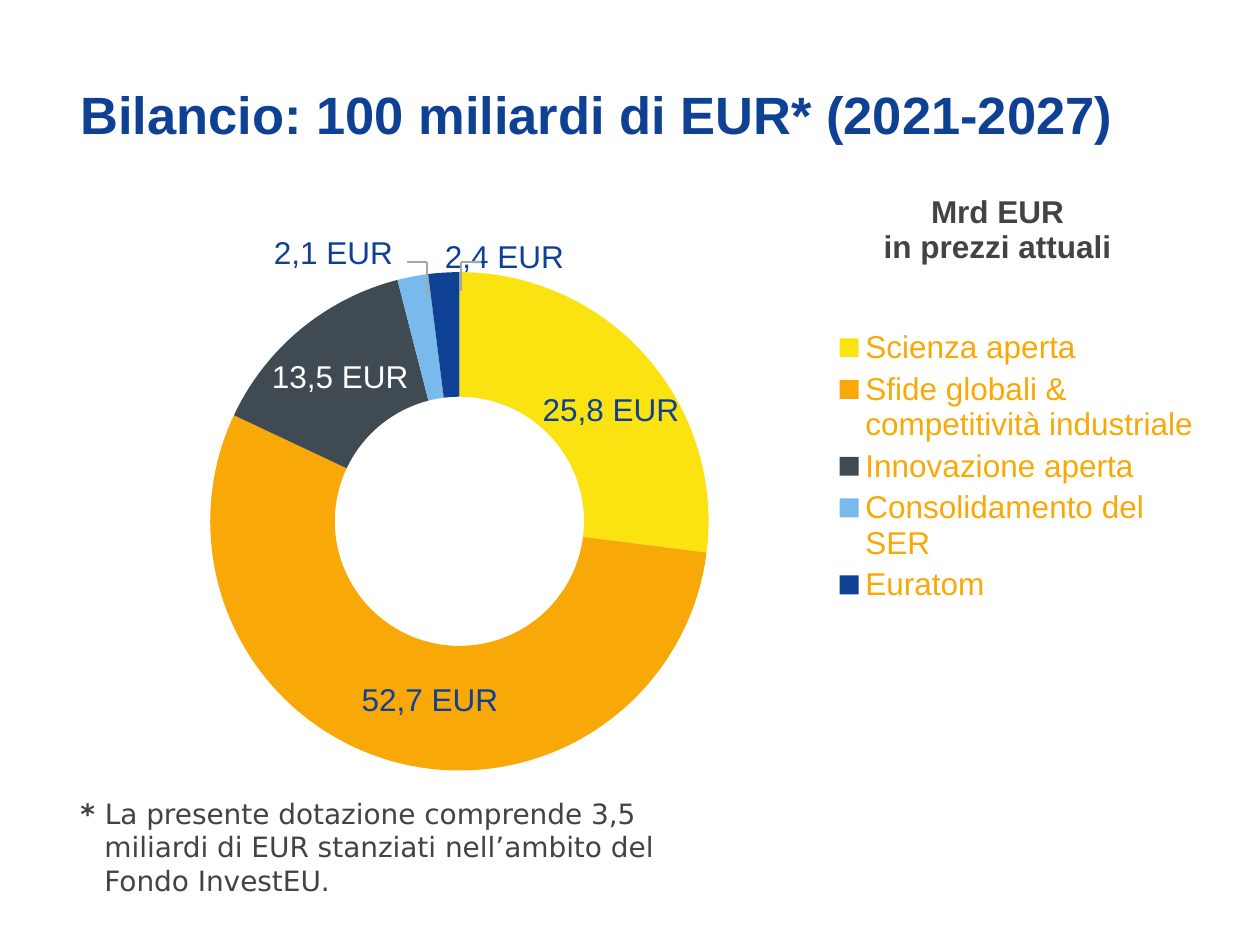
import dataclasses
from typing import Any

import pptx
import pptx.chart.data
import pptx.dml.color
import pptx.enum.chart
import pptx.enum.shapes
import pptx.oxml
import pptx.oxml.ns
import pptx.util

WIDTH, HEIGHT = pptx.util.Inches(10), pptx.util.Inches(7.5)
COLORS = {
    "blue": "0E4194", "yellow": "FBE312", "orange": "F8A907", "slate": "404A52",
    "sky": "78BAEB", "text": "444342", "white": "FFFFFF", "leader": "A6A6A6",
}


@dataclasses.dataclass(frozen=True)
class Budget:
    name: str
    amount: float
    color: str
    label_color: str = "blue"
    shift: tuple[float, float] = (0, 0)  # label offset, shares of the chart


@dataclasses.dataclass(frozen=True)
class Leader:
    """Elbow between a label and a thin slice, in shares of the slide."""
    corner_x: float
    end_x: float
    end_y: float


@dataclasses.dataclass(frozen=True)
class Note:
    box: tuple[float, float, float, float]  # shares of the slide
    runs: tuple[tuple[str, bool], ...]
    font: dict[str, Any]
    margin: float  # inches from the left edge of the text area
    hang: float


BUDGETS = [
    Budget("Scienza aperta", 25.8, "yellow", shift=(0.01, 0.02)),
    Budget("Sfide globali & competitività industriale", 52.7, "orange", shift=(0.02, 0)),
    Budget("Innovazione aperta", 13.5, "slate", "white"),
    Budget("Consolidamento del SER", 2.1, "sky", shift=(-0.08, -0.13)),
    Budget("Euratom", 2.4, "blue", shift=(0.05, -0.12)),
]
LEADER_Y = 2.08 / 7.5
LEADERS = [Leader(0.366, 0.382, 2.31 / 7.5), Leader(0.339, 0.323, 2.35 / 7.5)]
NOTES = [
    Note((0.054, 0.08, 0.844, 0.105), (("Bilancio: 100 miliardi di EUR* (2021-2027)", True),),
         {"name": "Arial", "size": 30, "color": "blue"}, 0.39, -0.39),
    Note((0.034, 0.836, 0.521, 0.157),
         (("* ", True), ("La presente dotazione comprende 3,5 miliardi di EUR stanziati "
                         "nell’ambito del Fondo InvestEU.", False)),
         {"name": "DejaVu Sans", "size": 16, "color": "text"}, 0.39, -0.19),
]


def rgb(name: str) -> pptx.dml.color.RGBColor:
    return pptx.dml.color.RGBColor.from_string(COLORS[name])


def place(x: float, y: float) -> tuple[int, int]:
    return round(x * WIDTH), round(y * HEIGHT)


def set_font(font, values: dict[str, Any]) -> None:
    for key, value in values.items():
        if key == "color":
            font.color.rgb = rgb(value)
        else:
            setattr(font, key, pptx.util.Pt(value) if key == "size" else value)


def set_layout(parent, index: int, values: dict[str, Any]) -> None:
    """Give a chart part a manual layout, in shares of the chart."""
    for old in parent.findall(pptx.oxml.ns.qn("c:layout")):
        parent.remove(old)
    items = "".join(f'<c:{key} val="{value}"/>' for key, value in values.items())
    parent.insert(index, pptx.oxml.parse_xml(
        f'<c:layout {pptx.oxml.ns.nsdecls("c")}>'
        f"<c:manualLayout>{items}</c:manualLayout></c:layout>"))


def add_note(s, note: Note) -> None:
    x, y, w, h = note.box
    tf = s.shapes.add_textbox(*place(x, y), *place(w, h)).text_frame
    tf.word_wrap = True
    p = tf.paragraphs[0]
    pPr = p._p.get_or_add_pPr()
    pPr.set("marL", str(pptx.util.Inches(note.margin)))
    pPr.set("indent", str(pptx.util.Inches(note.hang)))
    for text, bold in note.runs:
        r = p.add_run()
        r.text = text
        set_font(r.font, {**note.font, "bold": bold})


def add_line(s, start: tuple[float, float], end: tuple[float, float]) -> None:
    sp = s.shapes.add_connector(pptx.enum.shapes.MSO_CONNECTOR.STRAIGHT,
                                *place(*start), *place(*end))
    sp.line.color.rgb = rgb("leader")
    sp.line.width = pptx.util.Pt(1.5)
    sp._element.spPr.append(
        pptx.oxml.parse_xml(f'<a:effectLst {pptx.oxml.ns.nsdecls("a")}/>'))


def add_budget_chart(s) -> None:
    # Each slice is a share of the total, in whole percent
    total = sum(b.amount for b in BUDGETS)
    data = pptx.chart.data.CategoryChartData()
    data.categories = [b.name for b in BUDGETS]
    data.add_series("Series 1", [round(100 * b.amount / total) for b in BUDGETS])
    chart = s.shapes.add_chart(pptx.enum.chart.XL_CHART_TYPE.DOUGHNUT,
                               *place(0.067, 0.151), *place(0.902, 0.685), data).chart
    base = {"name": "Arial", "size": 18}
    set_font(chart.font, {**base, "color": "orange"})

    # Title and legend to the right of the ring
    chart.has_title = True
    tf = chart.chart_title.text_frame
    tf.text = "Mrd EUR\nin prezzi attuali"
    for p in tf.paragraphs:
        set_font(p.runs[0].font, {**base, "bold": True, "color": "text"})
    chart.has_legend = True
    chart.legend.position = pptx.enum.chart.XL_LEGEND_POSITION.RIGHT
    chart.legend.include_in_layout = False
    set_font(chart.legend.font, {**base, "color": "orange"})

    # Slices and their labels
    plot = chart.plots[0]
    plot.vary_by_categories = True
    series = plot.series[0]
    labels = series.data_labels
    labels.show_percentage, labels.show_value = True, False
    set_font(labels.font, {**base, "color": "white"})
    for i, b in enumerate(BUDGETS):
        point = series.points[i]
        point.format.fill.solid()
        point.format.fill.fore_color.rgb = rgb(b.color)
        point.format.line.fill.background()
        tf = point.data_label.text_frame
        tf.text = f"{b.amount} EUR".replace(".", ",")
        set_font(tf.paragraphs[0].runs[0].font, {**base, "color": b.label_color})

    # Manual positions
    root = chart.element
    for b, label in zip(BUDGETS, root.xpath(".//c:dLbl")):
        if any(b.shift):
            set_layout(label, 1, dict(zip("xy", b.shift)))
    for flag in root.xpath(".//c:showLeaderLines"):
        flag.set("val", "0")
    edges = {"xMode": "edge", "yMode": "edge"}
    set_layout(root.xpath(".//c:plotArea")[0], 0,
               {"layoutTarget": "inner", **edges, "x": 0.11, "y": 0.2, "w": 0.44, "h": 0.77})
    set_layout(root.xpath(".//c:legend")[0], 1,
               {**edges, "x": 0.66, "y": 0.28, "w": 0.32, "h": 0.44})
    set_layout(root.xpath(".//c:chart/c:title")[0], 1, {**edges, "x": 0.7, "y": 0.07})


def main() -> None:
    prs = pptx.Presentation()
    prs.slide_width, prs.slide_height = WIDTH, HEIGHT
    s = prs.slides.add_slide(prs.slide_layouts[6])
    title, footnote = NOTES
    add_note(s, title)
    add_budget_chart(s)
    add_note(s, footnote)
    # Leaders of the two thin slices
    for leader in LEADERS:
        corner = (leader.corner_x, LEADER_Y)
        add_line(s, corner, (leader.end_x, LEADER_Y))
        add_line(s, corner, (leader.corner_x, leader.end_y))
    prs.save("out.pptx")


if __name__ == "__main__":
    main()
